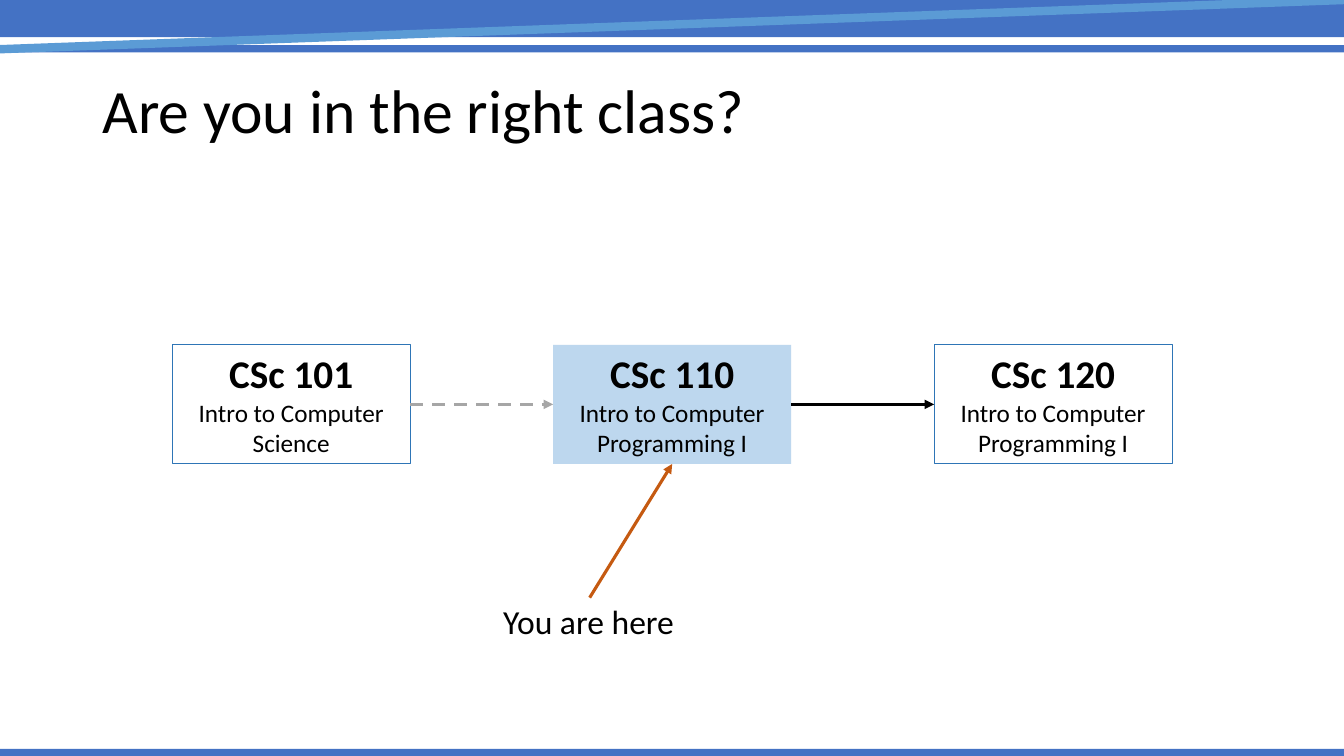
"""Build the course sequence slide that shows where the class stands."""
import dataclasses
import typing

import lxml.etree
import pptx
import pptx.dml.color
import pptx.enum.dml
import pptx.enum.shapes
import pptx.enum.text
import pptx.oxml.ns
import pptx.util

Cm = pptx.util.Cm
ALIGN = pptx.enum.text.PP_ALIGN
ANCHOR = pptx.enum.text.MSO_ANCHOR
AUTO_SIZE = pptx.enum.text.MSO_AUTO_SIZE

FONT = "Calibri"
BLACK = "000000"
BAND_BLUE = "4472C4"
PAGE_WIDTH, PAGE_HEIGHT = 33.87, 19.05
COURSE_LEFT, COURSE_TOP, COURSE_STEP = 4.34, 8.69, 9.6
COURSE_WIDTH, COURSE_HEIGHT = 6, 3


@dataclasses.dataclass
class Band:
    top: float
    height: float


@dataclasses.dataclass
class Course:
    code: str
    name: str
    fill: typing.Optional[str] = None
    line: typing.Optional[str] = "2E75B6"


BANDS = [Band(0, 0.94), Band(1.14, 0.18), Band(PAGE_HEIGHT - 0.18, 0.18)]
COURSES = [
    Course("CSc 101", "Intro to Computer Science"),
    Course("CSc 110", "Intro to Computer Programming I", "BDD7EE", None),
    Course("CSc 120", "Intro to Computer Programming I"),
]


def paint(color_format, color: str) -> None:
    """Set a colour from a hex string."""
    color_format.rgb = pptx.dml.color.RGBColor.from_string(color)


def add_span(para, text: str, size: float, bold: bool = False) -> None:
    """Add one formatted run to a paragraph."""
    span = para.add_run()
    span.text = text
    span.font.name = FONT
    span.font.size = pptx.util.Pt(size)
    span.font.bold = bold
    paint(span.font.color, BLACK)


def add_box(page, left: float, top: float, width: float, height: float,
            fill: typing.Optional[str], line: typing.Optional[str]):
    """Add a rectangle with optional fill and outline."""
    box = page.shapes.add_shape(pptx.enum.shapes.MSO_SHAPE.RECTANGLE,
                                Cm(left), Cm(top), Cm(width), Cm(height))
    box.shadow.inherit = False
    if fill:
        box.fill.solid()
        paint(box.fill.fore_color, fill)
    else:
        box.fill.background()
    if line:
        paint(box.line.color, line)
        box.line.width = pptx.util.Pt(0.75)
    else:
        box.line.fill.background()
    return box


def add_course(page, course: Course, position: int):
    """Add the box of one course at its place in the sequence."""
    box = add_box(page, COURSE_LEFT + position * COURSE_STEP, COURSE_TOP,
                  COURSE_WIDTH, COURSE_HEIGHT, course.fill, course.line)
    frame = box.text_frame
    frame.word_wrap = True
    frame.vertical_anchor = ANCHOR.TOP
    heading, detail = frame.paragraphs[0], frame.add_paragraph()
    heading.alignment = detail.alignment = ALIGN.CENTER
    add_span(heading, course.code, 28, bold=True)
    add_span(detail, course.name, 18)
    return box


def add_line(page, start: typing.Tuple[float, float], end: typing.Tuple[float, float],
             color: str, width: float):
    """Add a straight line without a shadow."""
    line = page.shapes.add_connector(pptx.enum.shapes.MSO_CONNECTOR.STRAIGHT,
                                     Cm(start[0]), Cm(start[1]), Cm(end[0]), Cm(end[1]))
    paint(line.line.color, color)
    line.line.width = pptx.util.Pt(width)
    lxml.etree.SubElement(line._element.spPr, pptx.oxml.ns.qn("a:effectLst"))
    return line


def add_arrow(page, start: typing.Tuple[float, float], target, side: int,
              color: str, source=None, dashed: bool = False) -> None:
    """Add an arrow to a side of the target, joined to the source's right side if given."""
    arrow = add_line(page, start, start, color, 2.25)
    if source is not None:
        arrow.begin_connect(source, 3)
    arrow.end_connect(target, side)
    if dashed:
        arrow.line.dash_style = pptx.enum.dml.MSO_LINE.DASH
    outline = arrow.line._get_or_add_ln()
    lxml.etree.SubElement(outline, pptx.oxml.ns.qn("a:tailEnd"), type="triangle")


def add_title(page, text: str) -> None:
    """Place and fill the title placeholder."""
    title = page.shapes.title
    title.left, title.top, title.width, title.height = Cm(2.33), Cm(1.01), Cm(29.21), Cm(3.68)
    title.text_frame.auto_size = AUTO_SIZE.NONE
    title.text_frame.vertical_anchor = ANCHOR.MIDDLE
    para = title.text_frame.paragraphs[0]
    para.alignment = ALIGN.LEFT
    para.line_spacing = 0.9
    add_span(para, text, 44)


def add_label(page, text: str) -> None:
    """Add the centred label under the sequence."""
    box = page.shapes.add_textbox(Cm(11.38), Cm(15.01), Cm(6.91), Cm(1.27))
    box.text_frame.word_wrap = True
    para = box.text_frame.paragraphs[0]
    para.alignment = ALIGN.CENTER
    add_span(para, text, 24)


def main() -> None:
    """Build and save the deck."""
    deck = pptx.Presentation()
    deck.slide_width, deck.slide_height = Cm(PAGE_WIDTH), Cm(PAGE_HEIGHT)
    page = deck.slides.add_slide(deck.slide_layouts[5])
    for band in BANDS:
        add_box(page, 0, band.top, PAGE_WIDTH, band.height, BAND_BLUE, None)
    add_line(page, (0, 1.24), (PAGE_WIDTH, 0), "5B9BD5", 6)
    add_title(page, "Are you in the right class?")
    intro, current, following = [add_course(page, course, position)
                                 for position, course in enumerate(COURSES)]
    add_arrow(page, (0, 0), following, 1, BLACK, source=current)
    add_arrow(page, (0, 0), current, 1, "A6A6A6", source=intro, dashed=True)
    add_arrow(page, (14.86, 15.06), current, 2, "C55A11")
    add_label(page, "You are here")
    deck.save("out.pptx")


if __name__ == "__main__":
    main()
